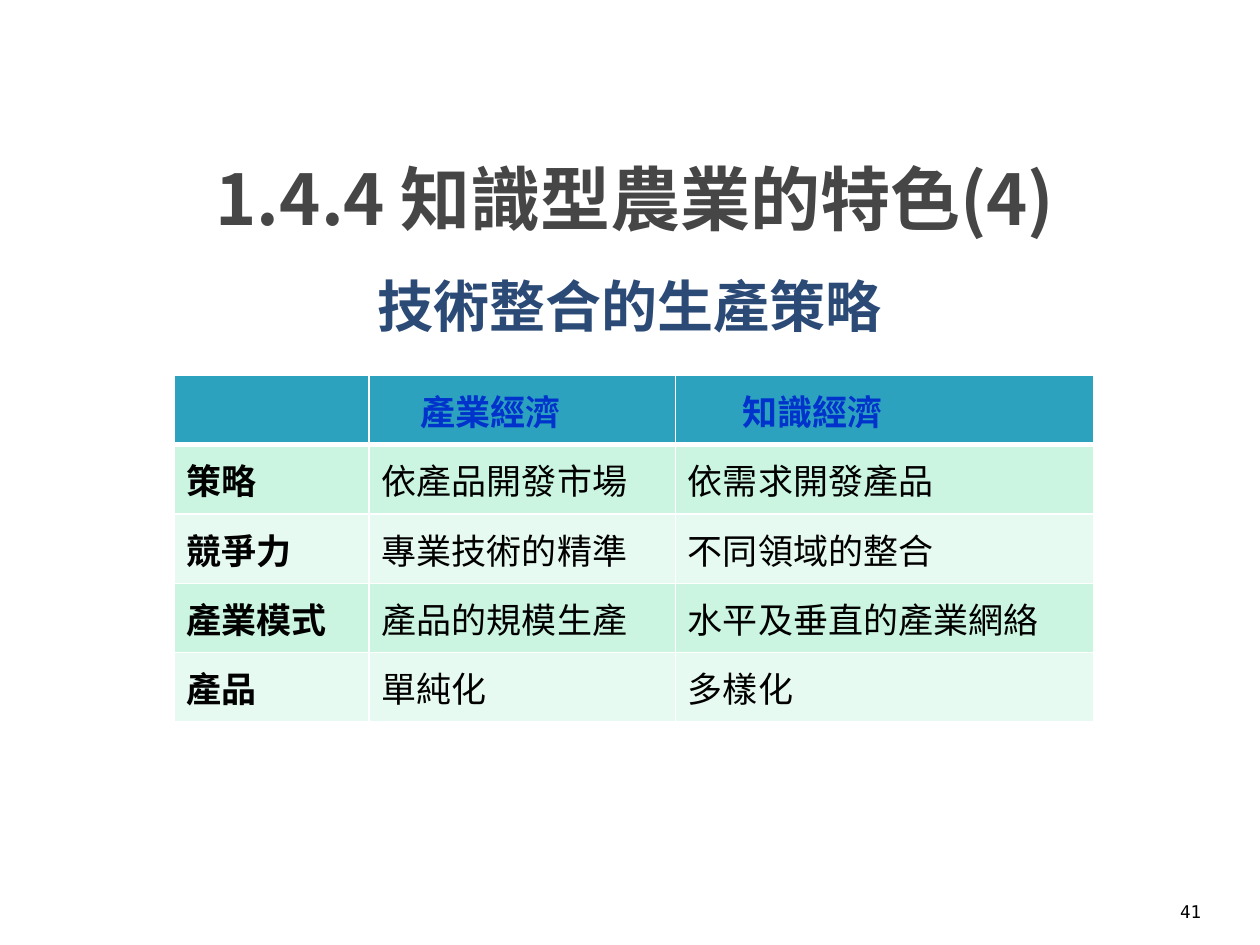
"""Build the slide that compares industrial and knowledge economies in farming."""
from lxml import etree
from pptx import Presentation
from pptx import util as u
from pptx.dml.color import RGBColor
from pptx.enum import text as t
from pptx.oxml.ns import qn

TITLE = "1.4.4 知識型農業的特色(4)"
SUB = "技術整合的生產策略"
PAGE = "41"
ROWS = [
    ("", "產業經濟", "知識經濟"),
    ("策略", "依產品開發市場", "依需求開發產品"),
    ("競爭力", "專業技術的精準", "不同領域的整合"),
    ("產業模式", "產品的規模生產", "水平及垂直的產業網絡"),
    ("產品", "單純化", "多樣化"),
]
COLS = (1.55, 2.43, 3.32)
INDENT = (0.1, 0.41, 0.53)
HIGH = 0.55
AT = {
    "title": (0.39, 0.86, 9.3, 1.41),
    "sub": (0.35, 1.94, 9.3, 0.96),
    "grid": (1.38, 2.98, sum(COLS), HIGH * len(ROWS)),
    "page": (9.18, 7.09, 0.54, 0.29),
}
CJK = "Noto Sans CJK SC"
THEME = {
    "title": {"name": CJK, "size": 40, "bold": True, "color": "464646"},
    "sub": {"name": CJK, "size": 32, "bold": True, "color": "2B4A76"},
    "page": {"name": "DejaVu Sans Mono", "size": 10, "bold": False, "color": "000000"},
    "head": {"name": "Arial", "size": 20, "bold": True, "color": "0033CC"},
    "label": {"name": "Arial", "size": 20, "bold": True, "color": "000000"},
    "cell": {"name": "Arial", "size": 20, "bold": False, "color": "000000"},
    "top": "2DA2BF",
    "bands": ("E7FAF1", "CBF5E1"),
    "line": "FFFFFF",
}


def write(frame, words, kind):
    """Put one styled line of text in a frame."""
    para = frame.paragraphs[0]
    para.space_before = u.Pt(0)
    run = para.add_run()
    run.text = words
    look = THEME[kind]
    vals = {"name": look["name"], "size": u.Pt(look["size"]), "bold": look["bold"]}
    for key, val in vals.items():
        setattr(run.font, key, val)
    run.font.color.rgb = RGBColor.from_string(look["color"])
    east = etree.Element(qn("a:ea"), typeface=CJK)
    run.font._element.find(qn("a:latin")).addnext(east)
    return para


def place(shape, words, kind):
    """Position a text shape and fill it with a centred line."""
    for key, val in zip(("left", "top", "width", "height"), AT[kind]):
        setattr(shape, key, u.Inches(val))
    frame = shape.text_frame
    vals = {"word_wrap": True, "auto_size": t.MSO_AUTO_SIZE.NONE,
            "vertical_anchor": t.MSO_ANCHOR.MIDDLE}
    for key, val in vals.items():
        setattr(frame, key, val)
    write(frame, words, kind).alignment = t.PP_ALIGN.CENTER


def edge(cell, row):
    """Draw the cell borders, thick below the heading row."""
    wide = {"L": 1, "R": 1, "T": 3 if row == 1 else 1, "B": 3 if row == 0 else 1}
    props = cell._tc.get_or_add_tcPr()
    for spot, (side, size) in enumerate(wide.items()):
        line = etree.Element(qn(f"a:ln{side}"), w=str(u.Pt(size)))
        fill = etree.SubElement(line, qn("a:solidFill"))
        etree.SubElement(fill, qn("a:srgbClr"), val=THEME["line"])
        props.insert(spot, line)


def grid(slide):
    """Add the comparison table."""
    spot = [u.Inches(val) for val in AT["grid"]]
    table = slide.shapes.add_table(len(ROWS), len(COLS), *spot).table
    for col, wide in zip(table.columns, COLS):
        col.width = u.Inches(wide)
    for r, row in enumerate(ROWS):
        table.rows[r].height = u.Inches(HIGH)
        for c, words in enumerate(row):
            cell = table.cell(r, c)
            cell.vertical_anchor = t.MSO_ANCHOR.MIDDLE
            cell.margin_left = u.Inches(INDENT[0] if r else INDENT[c])
            cell.fill.solid()
            shade = THEME["bands"][r % 2] if r else THEME["top"]
            cell.fill.fore_color.rgb = RGBColor.from_string(shade)
            edge(cell, r)
            if words:
                kind = "head" if r == 0 else "cell" if c else "label"
                write(cell.text_frame, words, kind)


def main():
    """Assemble and save the slide."""
    deck = Presentation()
    deck.slide_width, deck.slide_height = u.Inches(10), u.Inches(7.5)
    slide = deck.slides.add_slide(deck.slide_layouts[0])
    place(slide.shapes.title, TITLE, "title")
    place(slide.placeholders[1], SUB, "sub")
    grid(slide)
    place(slide.shapes.add_textbox(0, 0, 0, 0), PAGE, "page")
    deck.save("out.pptx")


if __name__ == "__main__":
    main()
